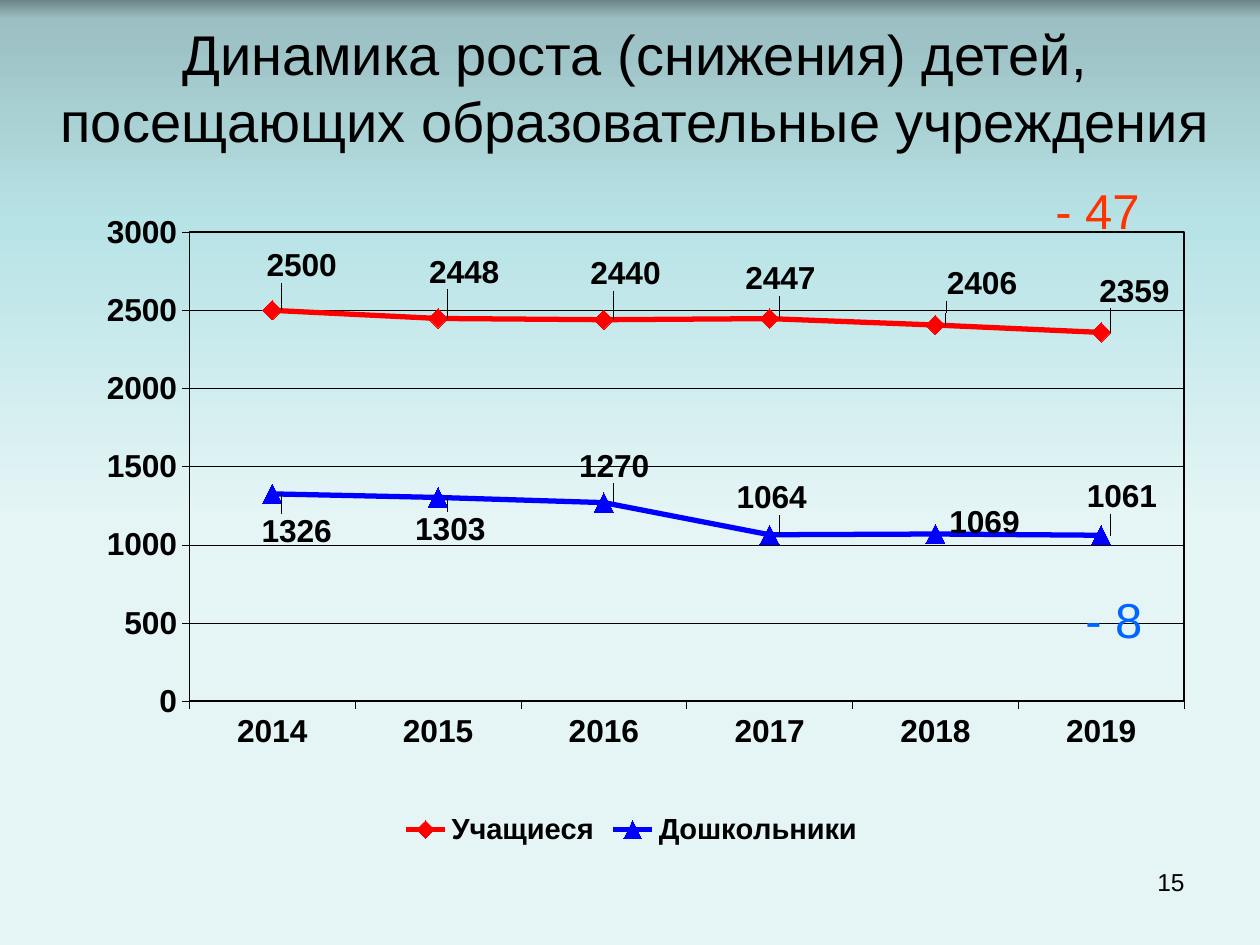
from dataclasses import dataclass

from lxml import etree
from pptx import Presentation
from pptx.chart.data import CategoryChartData
from pptx.dml.color import RGBColor
from pptx.enum.chart import (XL_CHART_TYPE, XL_LABEL_POSITION, XL_LEGEND_POSITION,
                             XL_MARKER_STYLE, XL_TICK_MARK)
from pptx.enum.text import MSO_ANCHOR, PP_ALIGN
from pptx.oxml import parse_xml
from pptx.oxml.ns import nsdecls, qn
from pptx.util import Inches, Pt

LEFT, CENTER, RIGHT = PP_ALIGN.LEFT, PP_ALIGN.CENTER, PP_ALIGN.RIGHT
TOP, MIDDLE = MSO_ANCHOR.TOP, MSO_ANCHOR.MIDDLE
DIAMOND, TRIANGLE = XL_MARKER_STYLE.DIAMOND, XL_MARKER_STYLE.TRIANGLE
OUTSIDE = XL_TICK_MARK.OUTSIDE
LABEL_RIGHT = XL_LABEL_POSITION.RIGHT
LEGEND_BOTTOM = XL_LEGEND_POSITION.BOTTOM

FONT = "Arial"
COLORS = {"text": "000000", "pupils": "FF0000", "preschool": "0000FF",
          "pupils_change": "FF3300", "preschool_change": "0066FF"}
BACKGROUND = [(0, "6D8688"), (2, "9BBFC2"), (24, "B8E3E6"), (55, "E5F5F6")]

YEARS = ["2014", "2015", "2016", "2017", "2018", "2019"]
AXIS_MAX, AXIS_STEP = 3000, 500
CHART = (0.56, 1.59, 8.9, 5.17)          # inches
PLOT = (0.106, 0.049, 0.887, 0.72)       # fractions of the chart
LEGEND = (0.33, 0.93, 0.43, 0.07)
LABEL_SHIFT = 0.37                       # from a point to its label's centre


@dataclass
class Series:
    name: str
    color: str
    marker: XL_MARKER_STYLE
    values: list[int]
    labels: list[tuple[float, float]]    # label centres on the slide


@dataclass
class Text:
    text: str
    box: tuple[float, float, float, float]
    size: float
    color: str = "text"
    align: PP_ALIGN = CENTER
    anchor: MSO_ANCHOR = MIDDLE
    wrap: bool = True


SERIES = [
    Series("Учащиеся", "pupils", DIAMOND, [2500, 2448, 2440, 2447, 2406, 2359],
           [(2.37, 2.11), (3.66, 2.16), (4.94, 2.17), (6.17, 2.21), (7.77, 2.25), (8.98, 2.31)]),
    Series("Дошкольники", "preschool", TRIANGLE, [1326, 1303, 1270, 1064, 1069, 1061],
           [(2.33, 4.22), (3.55, 4.2), (4.85, 3.7), (6.1, 3.95), (7.79, 4.15), (8.88, 3.94)]),
]
HEADINGS = [
    Text("15", (7.17, 6.83, 2.33, 0.52), 14, align=RIGHT, anchor=TOP),
    Text("Динамика роста (снижения) детей, посещающих образовательные учреждения",
         (0.33, 0.3, 9.42, 0.78), 32),
]
CHANGES = [
    Text("- 8", (8.42, 4.58, 0.84, 0.67), 28, "preschool_change", wrap=False),
    Text("- 47", (8.25, 1.33, 0.92, 0.67), 28, "pupils_change", wrap=False),
]


def rgb(name: str) -> RGBColor:
    return RGBColor.from_string(COLORS[name])


def set_font(font, size: float, color: str = "text", bold: bool = False) -> None:
    font.name, font.size, font.bold = FONT, Pt(size), bold
    font.color.rgb = rgb(color)


def set_line(line, color: str, width: float) -> None:
    line.color.rgb = rgb(color)
    line.width = Pt(width)


def set_background(s) -> None:
    fill = s.background.fill
    fill.gradient()
    fill.gradient_angle = 270
    stops = s._element.find(".//" + qn("a:gsLst"))
    for stop in list(stops):
        stops.remove(stop)
    for percent, color in BACKGROUND:
        gs = etree.SubElement(stops, qn("a:gs"), pos=str(percent * 1000))
        etree.SubElement(gs, qn("a:srgbClr"), val=color)


def add_text(s, t: Text) -> None:
    tf = s.shapes.add_textbox(*map(Inches, t.box)).text_frame
    tf.word_wrap, tf.vertical_anchor = t.wrap, t.anchor
    p = tf.paragraphs[0]
    p.text, p.alignment = t.text, t.align
    set_font(p.font, t.size, t.color)


def layout(x: float, y: float, size: tuple = (), mode: str = "", target: str = ""):
    """Manual chart layout; without a mode, x and y are offsets."""
    parts = [("layoutTarget", target)] if target else []
    if mode:
        parts += [("xMode", mode), ("yMode", mode)]
    parts += [("x", round(x, 4)), ("y", round(y, 4)), *zip("wh", size)]
    body = "".join(f'<c:{tag} val="{val}"/>' for tag, val in parts)
    return parse_xml(f'<c:layout {nsdecls("c")}><c:manualLayout>{body}'
                     '</c:manualLayout></c:layout>')


def format_series(series, data: Series) -> None:
    series.smooth = False
    set_line(series.format.line, data.color, 3)
    marker = series.marker
    marker.style, marker.size = data.marker, 11
    marker.format.fill.solid()
    marker.format.fill.fore_color.rgb = rgb(data.color)
    set_line(marker.format.line, data.color, 0.75)

    labels = series.data_labels
    labels.show_value = True
    set_font(labels.font, 18.1, bold=True)
    left, top, width, height = CHART
    for i, (value, (cx, cy)) in enumerate(zip(data.values, data.labels)):
        label = series.points[i].data_label
        set_font(label.font, 18.1, bold=True)
        label.position = LABEL_RIGHT
        x = left + width * (PLOT[0] + PLOT[2] * (i + 0.5) / len(YEARS))
        y = top + height * (PLOT[1] + PLOT[3] * (1 - value / AXIS_MAX))
        idx = series._element.findall(".//" + qn("c:dLbl"))[i].find(qn("c:idx"))
        idx.addnext(layout((cx - x - LABEL_SHIFT) / width, (cy - y) / height))


def add_line_chart(s) -> None:
    data = CategoryChartData()
    data.categories = YEARS
    for item in SERIES:
        data.add_series(item.name, item.values)
    chart = s.shapes.add_chart(XL_CHART_TYPE.LINE_MARKERS, *map(Inches, CHART), data).chart
    set_font(chart.font, 18.1, bold=True)
    chart.has_title = False
    chart.plots[0].vary_by_categories = False

    # Axes
    for axis in (chart.category_axis, chart.value_axis):
        axis.major_tick_mark = OUTSIDE
        set_font(axis.tick_labels.font, 18.1, bold=True)
        set_line(axis.format.line, "text", 0.25)
    axis = chart.value_axis
    axis.minimum_scale, axis.maximum_scale, axis.major_unit = 0, AXIS_MAX, AXIS_STEP
    axis.has_major_gridlines = True
    set_line(axis.major_gridlines.format.line, "text", 0.25)

    # Legend
    chart.has_legend = True
    legend = chart.legend
    legend.position, legend.include_in_layout = LEGEND_BOTTOM, False
    set_font(legend.font, 16.6, bold=True)
    legend._element.find(qn("c:legendPos")).addnext(
        layout(*LEGEND[:2], LEGEND[2:], "edge"))

    # Plot area: place and frame
    area = chart._chartSpace.find(".//" + qn("c:plotArea"))
    for old in area.findall(qn("c:layout")):
        area.remove(old)
    area.insert(0, layout(*PLOT[:2], PLOT[2:], "edge", "inner"))
    area.append(parse_xml(
        f'<c:spPr {nsdecls("c", "a")}><a:noFill/><a:ln w="{Pt(1)}"><a:solidFill>'
        f'<a:srgbClr val="{COLORS["text"]}"/></a:solidFill></a:ln></c:spPr>'))

    for series, item in zip(chart.plots[0].series, SERIES):
        format_series(series, item)


def main() -> None:
    prs = Presentation()
    prs.slide_width, prs.slide_height = Inches(10), Inches(7.5)
    s = prs.slides.add_slide(prs.slide_layouts[6])
    set_background(s)
    for t in HEADINGS:
        add_text(s, t)
    add_line_chart(s)
    for t in CHANGES:
        add_text(s, t)
    prs.save("out.pptx")


if __name__ == "__main__":
    main()
